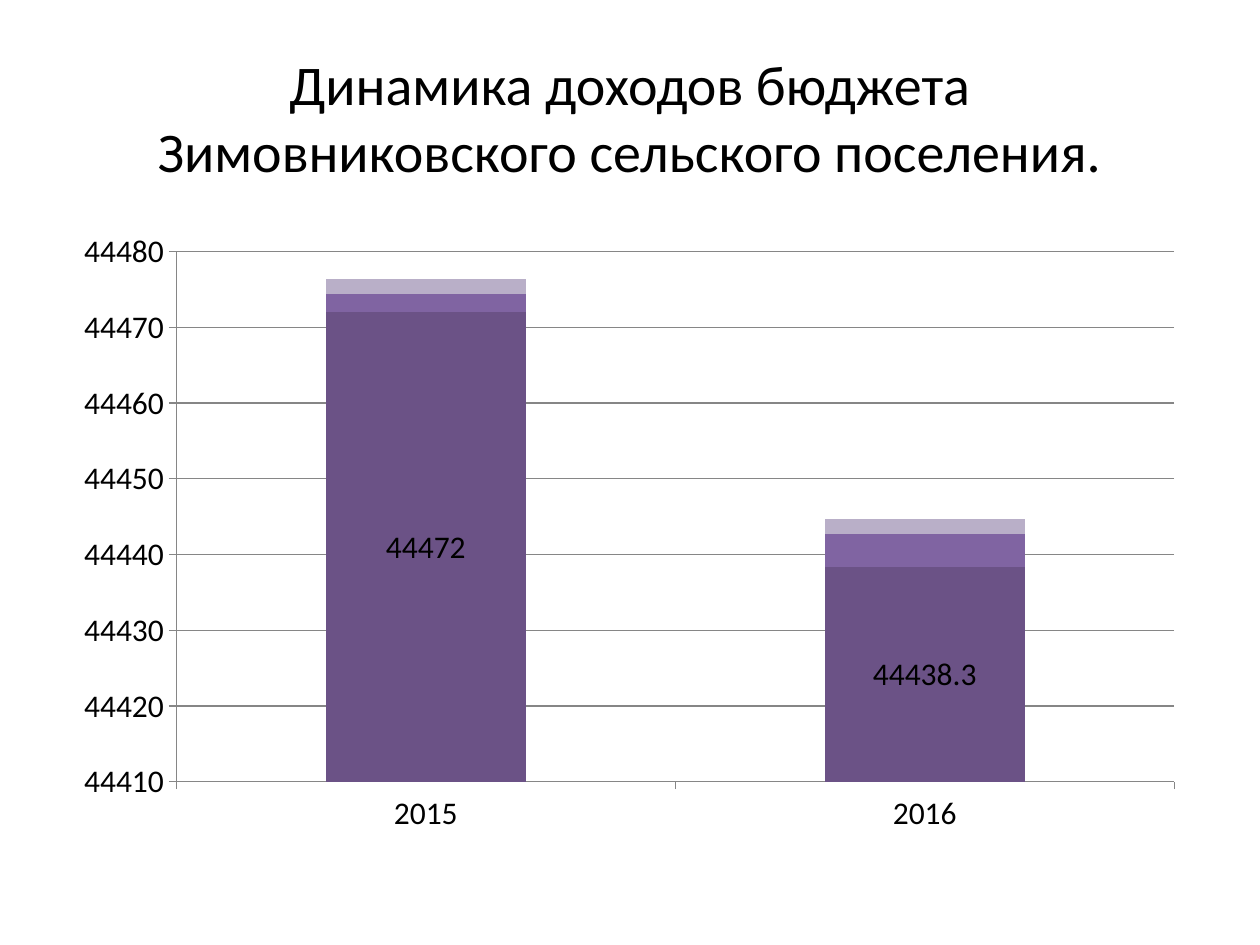
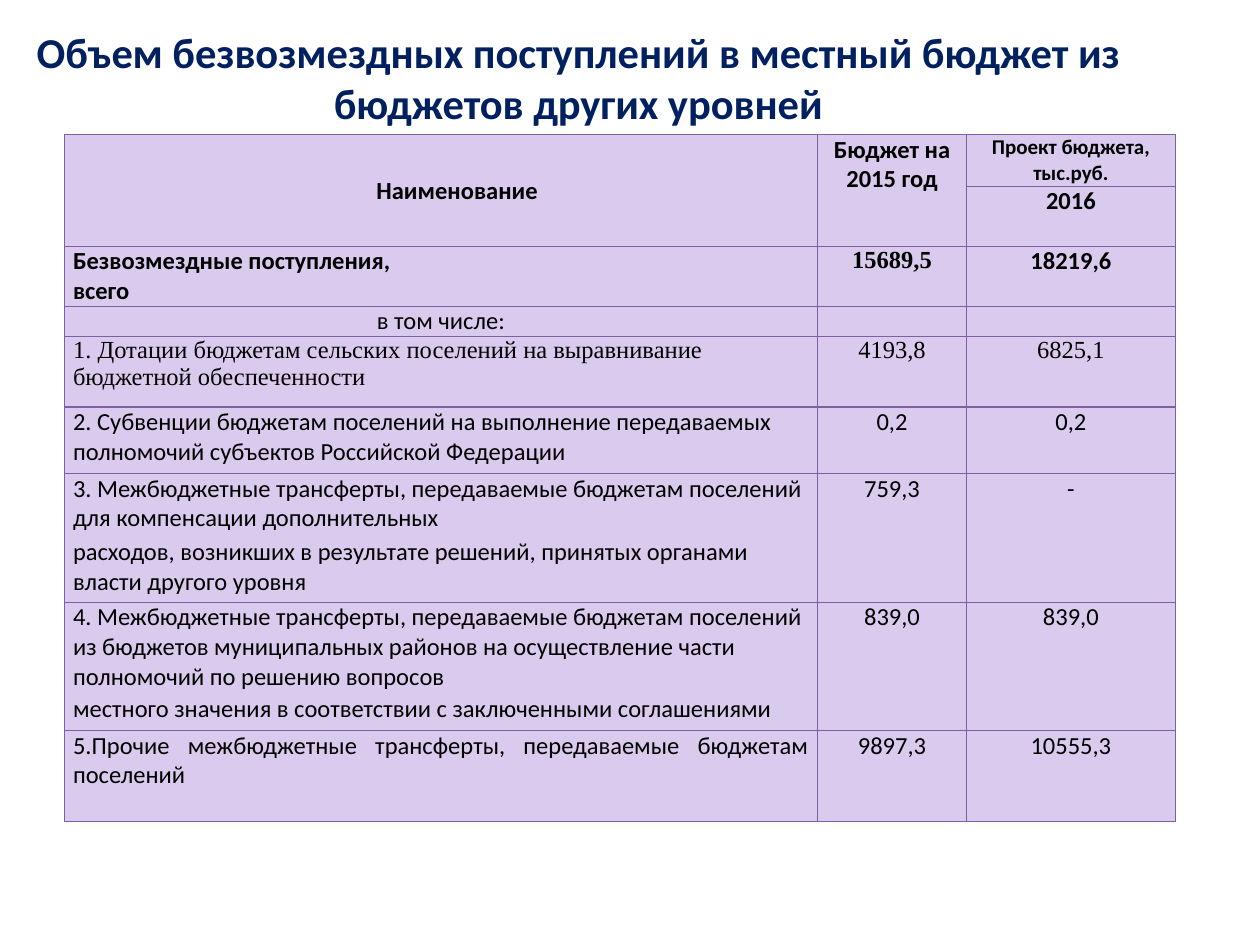
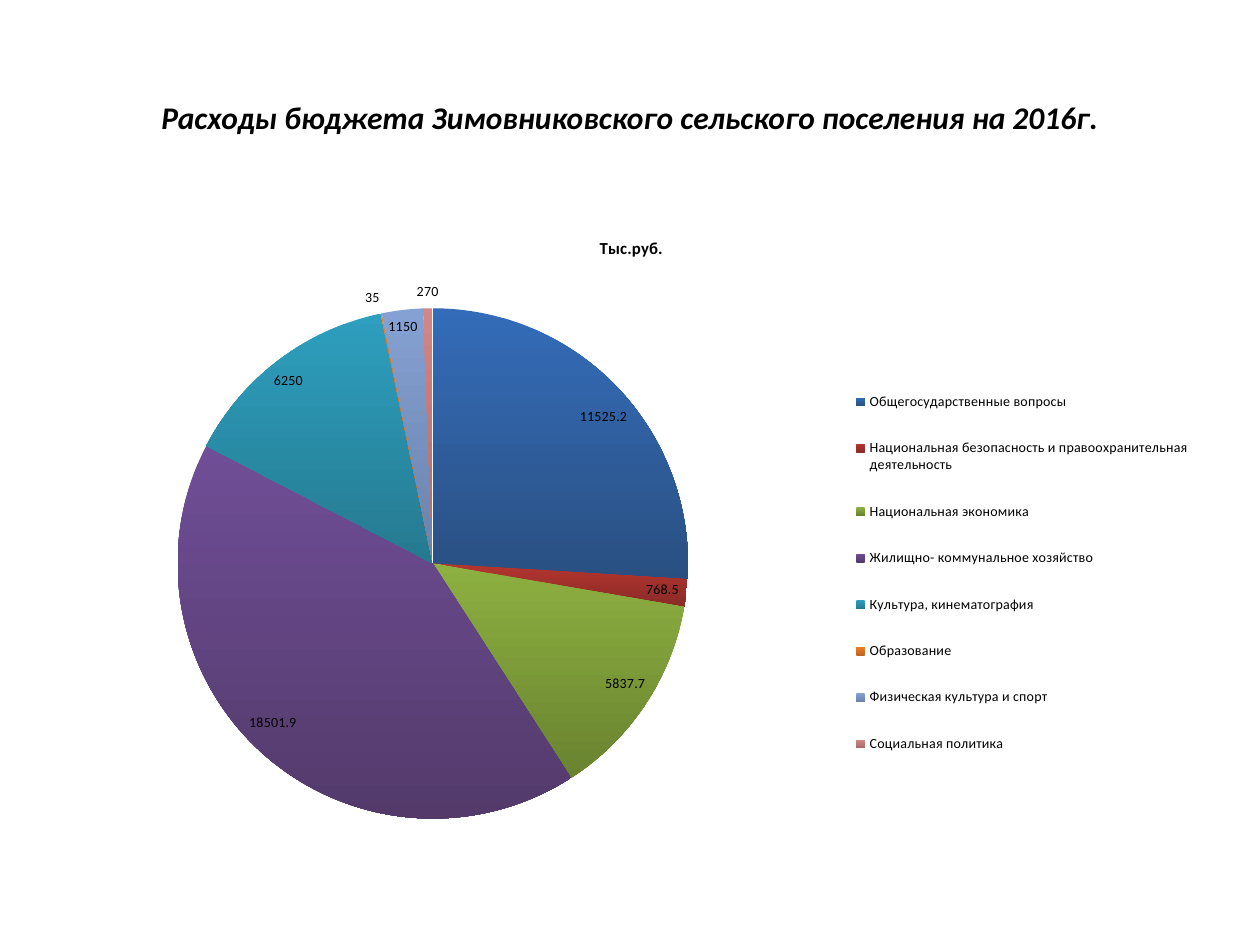
from lxml import etree
from pptx import Presentation
from pptx import util as u
from pptx.chart.data import CategoryChartData
from pptx.dml.color import RGBColor
from pptx.enum import chart as ch, text as tx
from pptx.oxml.ns import qn

BLACK = RGBColor(0, 0, 0)
NAVY = RGBColor(0x00, 0x20, 0x60)
GREY = RGBColor(0x86, 0x86, 0x86)
LILAC = RGBColor(0xDA, 0xCA, 0xEE)
EDGE = RGBColor(0x7D, 0x60, 0xA0)
FONT, SERIF = "Calibri", "Times New Roman"
LEFT, CENTER, JUST = tx.PP_ALIGN.LEFT, tx.PP_ALIGN.CENTER, tx.PP_ALIGN.JUSTIFY
TOP, MIDDLE = tx.MSO_ANCHOR.TOP, tx.MSO_ANCHOR.MIDDLE

# Slide 1
YEARS = ["2015", "2016"]
INCOME = [  # name, values, colour
    ("Series 1", (44472, 44438.3), RGBColor(0x6B, 0x52, 0x86)),
    ("Series 2", (2.4, 4.4), RGBColor(0x80, 0x64, 0xA2)),
    ("Series 3", (2, 2), RGBColor(0xB9, 0xAF, 0xC8)),
]

# Slide 2
COLS = [5.98, 1.18, 1.66]
ROWS = [  # height, cells; a list holds the paragraphs of one cell
    (0.4, ["Наименование ", "Бюджет на 2015 год", "Проект бюджета, тыс.руб."]),
    (0.48, [None, None, "2016"]),
    (0.47, [["Безвозмездные поступления,", "всего"], "15689,5", "18219,6"]),
    (0.24, ["в том числе:", "", ""]),
    (0.56, ["1. Дотации бюджетам сельских поселений на выравнивание "
            "бюджетной обеспеченности", "4193,8", "6825,1"]),
    (0.53, ["2. Субвенции бюджетам поселений на выполнение передаваемых "
            "полномочий субъектов Российской Федерации", "0,2", "0,2"]),
    (1.02, [["3. Межбюджетные трансферты, передаваемые бюджетам поселений "
             "для компенсации дополнительных",
             "расходов, возникших в результате решений, принятых органами "
             "власти другого уровня"], "759,3", "-"]),
    (1.02, [["4. Межбюджетные трансферты, передаваемые бюджетам поселений "
             "из бюджетов муниципальных районов на осуществление части "
             "полномочий по решению вопросов",
             "местного значения в соответствии с заключенными соглашениями"],
            "839,0", "839,0"]),
    (0.72, ["5.Прочие межбюджетные трансферты, передаваемые бюджетам "
            "поселений", "9897,3", "10555,3"]),
]
BOLD_ROWS = 3
SERIF_CELLS = {(2, 1), (4, 0), (4, 1), (4, 2)}
ALIGN = {2: LEFT, 4: LEFT, 5: LEFT, 6: LEFT, 7: LEFT, 8: JUST}  # first column
SPACE = {6: 2.4, 7: 1.6}

# Slide 3
COSTS = [  # name, value, upper and lower colour of the slice
    ("Общегосударственные вопросы", 11525.2, "346CB9", "2A5082"),
    ("Национальная безопасность и правоохранительная деятельность",
     768.5, "B5352F", "8A2B27"),
    ("Национальная экономика", 5837.7, "8DB041", "69832F"),
    ("Жилищно- коммунальное хозяйство", 18501.9, "704E97", "533A6B"),
    ("Культура, кинематография", 6250, "2E9FBF", "257A90"),
    ("Образование", 35, "EE7F25", "C0651F"),
    ("Физическая культура и спорт", 1150, "85A1D3", "6A82AB"),
    ("Социальная политика", 270, "D38685", "A86B6A"),
]


def style(font, size, **more):
    values = {"name": FONT, "size": u.Pt(size), "bold": False, **more}
    color = values.pop("color", BLACK)
    for key, value in values.items():
        setattr(font, key, value)
    font.color.rgb = color


def inches(*box):
    return [u.Inches(n) for n in box]


def add_slide(prs, title, size, box=(0.5, 0.3, 9, 1.25), anchor=MIDDLE, **more):
    slide = prs.slides.add_slide(prs.slide_layouts[5])
    shape = slide.shapes.title
    shape.left, shape.top, shape.width, shape.height = inches(*box)
    frame = shape.text_frame
    frame.text = title
    frame.word_wrap, frame.auto_size = True, tx.MSO_AUTO_SIZE.NONE
    frame.vertical_anchor = anchor
    if anchor == TOP:
        frame.margin_top = 0
    para = frame.paragraphs[0]
    para.alignment = CENTER
    style(para.runs[0].font, size, **more)
    return slide


def add_chart(slide, kind, box, cats, series, size):
    data = CategoryChartData()
    data.categories = cats
    for name, values in series:
        data.add_series(name, values)
    chart = slide.shapes.add_chart(kind, *inches(*box), data).chart
    style(chart.font, size)
    return chart


def place(part, shares, inner=False):
    """Fix a chart part at x, y, w, h, given as shares of the chart."""
    for old in part.findall(qn("c:layout")):
        part.remove(old)
    layout = etree.Element(qn("c:layout"))
    manual = etree.SubElement(layout, qn("c:manualLayout"))
    values = {"layoutTarget": "inner"} if inner else {}
    values |= {"xMode": "edge", "yMode": "edge"} | dict(zip("xywh", shares))
    for key, value in values.items():
        etree.SubElement(manual, qn("c:" + key), val=str(value))
    entry = part.find(qn("c:legendPos"))
    part.insert(0 if entry is None else part.index(entry) + 1, layout)


def plot_area(chart):
    return chart._chartSpace.chart.plotArea


def show_values(labels, size, spot):
    labels.show_value, labels.position = True, spot
    style(labels.font, size)


def income_slide(prs):
    slide = add_slide(
        prs, "Динамика доходов бюджета Зимовниковского сельского поселения.", 32)
    chart = add_chart(slide, ch.XL_CHART_TYPE.COLUMN_STACKED,
                      (0.5, 1.75, 9, 4.95), YEARS,
                      [row[:2] for row in INCOME], 18)
    chart.has_legend = chart.has_title = False
    plot = chart.plots[0]
    plot.gap_width, plot.overlap, plot.vary_by_categories = 150, 100, False
    for series, (_, _, color) in zip(plot.series, INCOME):
        series.format.fill.solid()
        series.format.fill.fore_color.rgb = color
    show_values(plot.series[0].data_labels, 18, ch.XL_LABEL_POSITION.CENTER)
    scale = chart.value_axis
    scale.minimum_scale, scale.maximum_scale, scale.major_unit = 44410, 44480, 10
    scale.has_major_gridlines = True
    scale.major_gridlines.format.line.color.rgb = GREY
    for axis in (scale, chart.category_axis):
        axis.major_tick_mark = ch.XL_TICK_MARK.OUTSIDE
        axis.format.line.color.rgb = GREY
        style(axis.tick_labels.font, 18)
    place(plot_area(chart), (0.1, 0.05, 0.88, 0.85), inner=True)


def add_borders(cell):
    props = cell._tc.get_or_add_tcPr()
    for i, side in enumerate(("lnL", "lnR", "lnT", "lnB")):
        line = etree.Element(qn("a:" + side), w=str(u.Pt(0.75)))
        fill = etree.SubElement(line, qn("a:solidFill"))
        etree.SubElement(fill, qn("a:srgbClr"), val=str(EDGE))
        props.insert(i, line)


def fill_cell(cell, words, row, col):
    paras = words if isinstance(words, list) else [words]
    frame = cell.text_frame
    frame.text = "\n".join(paras)
    for para in frame.paragraphs:
        para.alignment = ALIGN.get(row, CENTER) if col == 0 else CENTER
        if col == 0 and row in SPACE:
            para.space_before = u.Pt(SPACE[row])
        for run in para.runs:
            style(run.font, 12 if (row, col) == (0, 2) else 14,
                  bold=row < BOLD_ROWS,
                  name=SERIF if (row, col) in SERIF_CELLS else FONT)
        if not para.runs:
            para._p.get_or_add_endParaRPr().set("sz", "1400")


def grants_slide(prs):
    slide = add_slide(
        prs, "Объем безвозмездных поступлений в местный бюджет из бюджетов "
        "других уровней", 24.3, (0.09, 0.21, 9, 1.01), TOP,
        bold=True, color=NAVY)
    heights = [height for height, _ in ROWS]
    table = slide.shapes.add_table(
        len(ROWS), len(COLS),
        *inches(0.51, 1.07, sum(COLS), sum(heights))).table
    for col, width in zip(table.columns, COLS):
        col.width = u.Inches(width)
    for r, (height, cells) in enumerate(ROWS):
        table.rows[r].height = u.Inches(height)
        for c, words in enumerate(cells):
            cell = table.cell(r, c)
            cell.margin_left = cell.margin_right = u.Inches(0.07)
            cell.margin_top = cell.margin_bottom = 0
            cell.fill.solid()
            cell.fill.fore_color.rgb = LILAC
            add_borders(cell)
            if words is not None:
                fill_cell(cell, words, r, c)
    for c in (0, 1):
        table.cell(0, c).merge(table.cell(1, c))
    head = table.cell(0, 0)
    head.vertical_anchor = MIDDLE
    props = head.text_frame.paragraphs[0]._p.get_or_add_pPr()
    props.set("indent", str(u.Inches(0.3)))


def costs_slide(prs):
    slide = add_slide(
        prs, "Расходы бюджета Зимовниковского сельского поселения на 2016г.",
        18, bold=True, italic=True)
    names, values, tops, ends = zip(*COSTS)
    chart = add_chart(slide, ch.XL_CHART_TYPE.PIE, (0.51, 1.7, 9, 4.95),
                      names, [("Series 1", values)], 8)
    chart.has_title = True
    frame = chart.chart_title.text_frame
    frame.text = "Тыс.руб."
    style(frame.paragraphs[0].runs[0].font, 9.6, bold=True)
    chart.has_legend = True
    legend = chart.legend
    legend.position = ch.XL_LEGEND_POSITION.RIGHT
    legend.include_in_layout = False
    style(legend.font, 8)
    plot = chart.plots[0]
    plot.vary_by_categories = True
    series = plot.series[0]
    for i, pair in enumerate(zip(tops, ends)):
        fill = series.points[i].format.fill
        fill.gradient()
        fill.gradient_angle = 270
        for stop, color in zip(fill.gradient_stops, pair):
            stop.color.rgb = RGBColor.from_string(color)
    show_values(series.data_labels, 8, ch.XL_LABEL_POSITION.BEST_FIT)
    place(plot_area(chart), (0.1, 0.15, 0.45, 0.82), inner=True)
    place(legend._element, (0.69, 0.24, 0.31, 0.67))


def main():
    prs = Presentation()
    prs.slide_width, prs.slide_height = inches(10, 7.5)
    for build in (income_slide, grants_slide, costs_slide):
        build(prs)
    prs.save("out.pptx")


if __name__ == "__main__":
    main()
